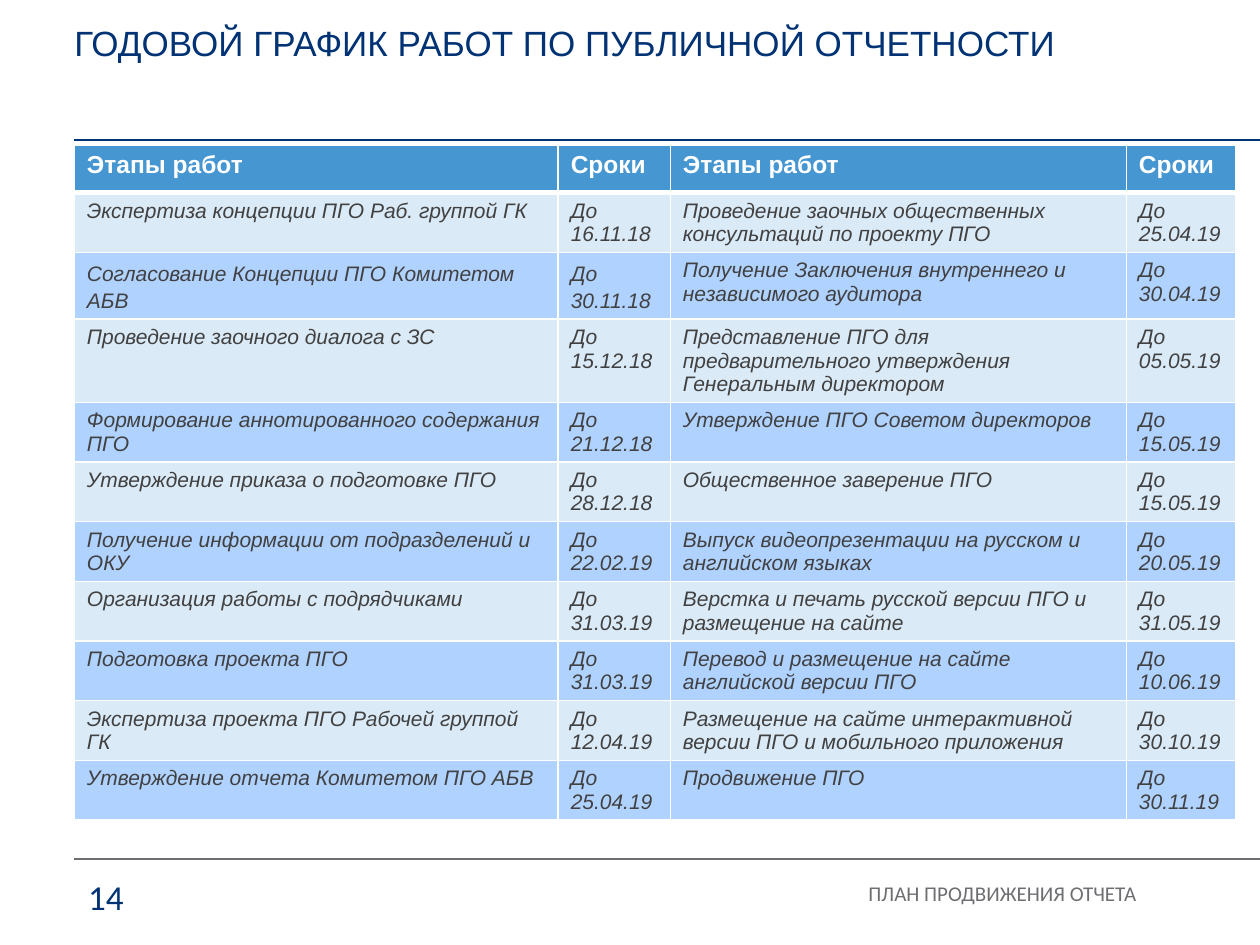
from lxml import etree
from pptx import Presentation
from pptx.dml.color import RGBColor
from pptx.enum.shapes import MSO_CONNECTOR
from pptx.enum.text import PP_ALIGN
from pptx.oxml.ns import qn
from pptx.util import Inches, Pt

STRAIGHT = MSO_CONNECTOR.STRAIGHT
LEFT, RIGHT = PP_ALIGN.LEFT, PP_ALIGN.RIGHT

NAVY, GRAY, WHITE = "003274", "6D6E71", "FFFFFF"
HEADER_FILL = "4596D1"
BAND_FILLS = ("DAEAF6", "B0D2FF")

TITLE = "ГОДОВОЙ ГРАФИК РАБОТ ПО ПУБЛИЧНОЙ ОТЧЕТНОСТИ"
FOOTER = "ПЛАН ПРОДВИЖЕНИЯ ОТЧЕТА"
PAGE_NUMBER = "14"

HEADER = ("Этапы работ", "Сроки") * 2
STAGES = [
    ("Экспертиза концепции ПГО Раб. группой ГК", "16.11.18",
     "Проведение заочных общественных консультаций по проекту ПГО", "25.04.19"),
    ("Согласование Концепции ПГО Комитетом АБВ", "30.11.18",
     "Получение Заключения внутреннего и независимого аудитора", "30.04.19"),
    ("Проведение заочного диалога с ЗС", "15.12.18",
     "Представление ПГО для предварительного утверждения Генеральным директором", "05.05.19"),
    ("Формирование аннотированного содержания ПГО", "21.12.18",
     "Утверждение ПГО Советом директоров", "15.05.19"),
    ("Утверждение приказа о подготовке ПГО", "28.12.18",
     "Общественное заверение ПГО", "15.05.19"),
    ("Получение информации от подразделений и ОКУ", "22.02.19",
     "Выпуск видеопрезентации на русском и английском языках", "20.05.19"),
    ("Организация работы с подрядчиками", "31.03.19",
     "Верстка и печать русской версии ПГО и размещение на сайте", "31.05.19"),
    ("Подготовка проекта ПГО", "31.03.19",
     "Перевод и размещение на сайте английской версии ПГО", "10.06.19"),
    ("Экспертиза проекта ПГО Рабочей группой ГК", "12.04.19",
     "Размещение на сайте интерактивной версии ПГО и мобильного приложения", "30.10.19"),
    ("Утверждение отчета Комитетом ПГО АБВ", "25.04.19",
     "Продвижение ПГО", "30.11.19"),
]
COLUMN_WIDTHS = (3.84, 0.89, 3.62, 0.87)
ROW_HEIGHTS = (0.38, 0.33, 0.38, 0.34, 0.33, 0.38, 0.38, 0.32, 0.38, 0.38, 0.36)
LOOSE_CELLS = {(2, 0), (2, 1)}
LEFT_EDGE, SLIDE_WIDTH = 0.59, 10
RULES = [(1.11, NAVY, 1), (6.82, GRAY, 1)]

HEADER_FORMAT = {"name": "Arial", "size": Pt(14), "bold": True, "italic": False}
BODY_FORMAT = {"name": "Arial", "size": Pt(12), "bold": False, "italic": True}
TEXTS = [
    (PAGE_NUMBER, (0.37, 6.9, 0.71, 0.39), (0.1, 0.05), RIGHT, None,
     {"name": "Calibri", "size": Pt(20)}, NAVY),
    (FOOTER, (3.35, 7.01, 5.67, 0.46), (0, 0), RIGHT, Pt(13),
     {"name": "Calibri", "size": Pt(12)}, GRAY),
    (TITLE, (LEFT_EDGE, 0.13, 9, 0.94), (0, 0.04), LEFT, None,
     {"name": "Arial", "size": Pt(20)}, NAVY),
]


def color(value):
    return RGBColor.from_string(value)


def write(frame, text, font_format, font_color, alignment=LEFT, line_spacing=None):
    paragraph = frame.paragraphs[0]
    paragraph.alignment = alignment
    paragraph.line_spacing = line_spacing
    run = paragraph.add_run()
    run.text = text
    for name, value in font_format.items():
        setattr(run.font, name, value)
    run.font.color.rgb = color(font_color)


def add_text(slide, text, box, insets, alignment, line_spacing, font_format, font_color):
    frame = slide.shapes.add_textbox(*map(Inches, box)).text_frame
    frame.word_wrap = True
    frame.margin_left = frame.margin_right = Inches(insets[0])
    frame.margin_top = frame.margin_bottom = Inches(insets[1])
    write(frame, text, font_format, font_color, alignment, line_spacing)


def add_rule(slide, top, line_color, width):
    connector = slide.shapes.add_connector(
        STRAIGHT, Inches(LEFT_EDGE), Inches(top), Inches(SLIDE_WIDTH), Inches(top))
    connector.line.color.rgb = color(line_color)
    connector.line.width = Pt(width)
    etree.SubElement(connector._element.spPr, qn("a:effectLst"))


def add_borders(cell, widths):
    properties = cell._tc.get_or_add_tcPr()
    for side, width in widths.items():
        line = etree.SubElement(properties, qn(f"a:ln{side}"), w=str(Pt(width)))
        fill = etree.SubElement(line, qn("a:solidFill"))
        etree.SubElement(fill, qn("a:srgbClr"), val=WHITE)


def add_schedule(slide):
    rows = [HEADER] + [(first, f"До {first_date}", second, f"До {second_date}")
                       for first, first_date, second, second_date in STAGES]
    table = slide.shapes.add_table(
        len(rows), len(HEADER), Inches(LEFT_EDGE), Inches(1.15),
        Inches(sum(COLUMN_WIDTHS)), Inches(sum(ROW_HEIGHTS))).table
    for column, width in zip(table.columns, COLUMN_WIDTHS):
        column.width = Inches(width)
    for row, height in zip(table.rows, ROW_HEIGHTS):
        row.height = Inches(height)
    for i, texts in enumerate(rows):
        is_header = i == 0
        fill = HEADER_FILL if is_header else BAND_FILLS[(i - 1) % 2]
        font_format = HEADER_FORMAT if is_header else BODY_FORMAT
        font_color = WHITE if is_header else "414142"
        borders = {"L": 1, "R": 1, "T": 3 if i == 1 else 1, "B": 3 if is_header else 1}
        for j, text in enumerate(texts):
            cell = table.cell(i, j)
            add_borders(cell, borders)
            cell.fill.solid()
            cell.fill.fore_color.rgb = color(fill)
            spacing = 1.15 if (i, j) in LOOSE_CELLS else None
            write(cell.text_frame, text, font_format, font_color, line_spacing=spacing)


def main():
    presentation = Presentation()
    presentation.slide_width = Inches(SLIDE_WIDTH)
    presentation.slide_height = Inches(7.5)
    slide = presentation.slides.add_slide(presentation.slide_layouts[6])
    for rule in RULES:
        add_rule(slide, *rule)
    add_schedule(slide)
    for text in TEXTS:
        add_text(slide, *text)
    presentation.save("out.pptx")


if __name__ == "__main__":
    main()
